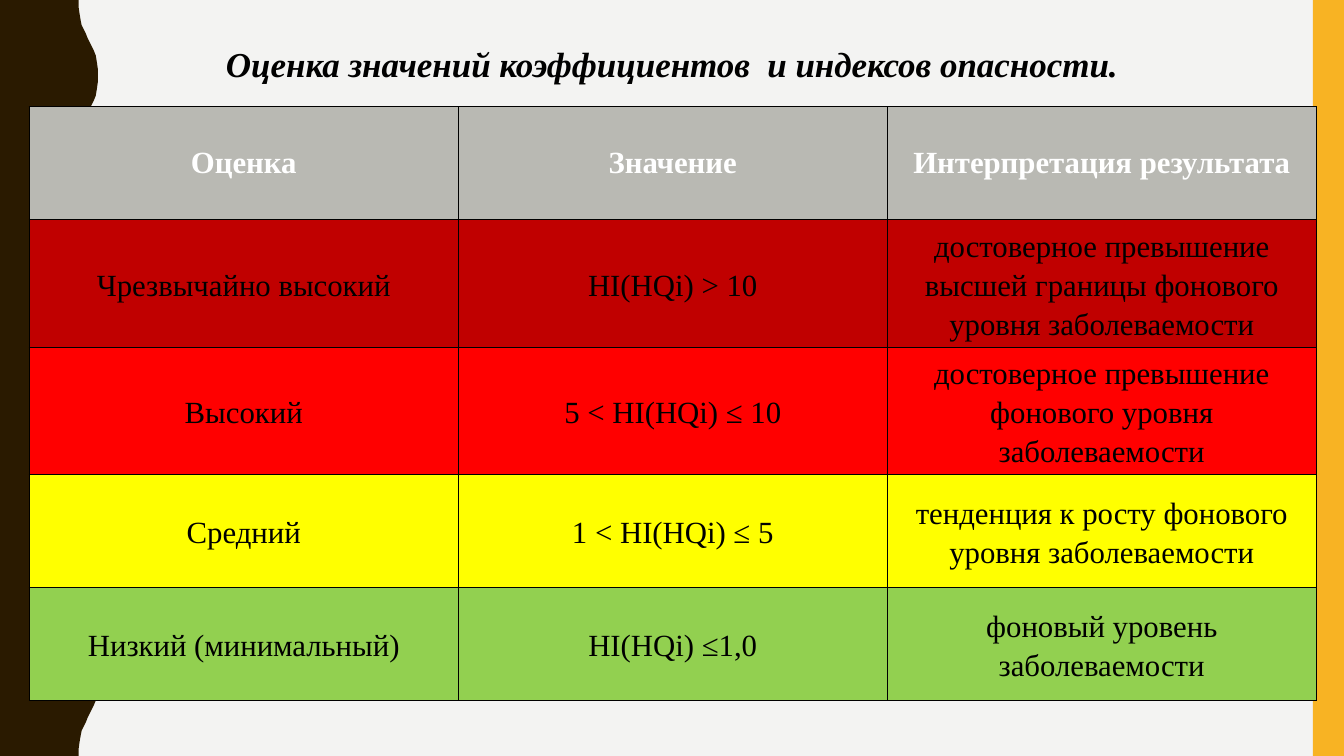
from lxml.etree import SubElement
from pptx import Presentation
from pptx.dml.color import RGBColor
from pptx.enum.shapes import MSO_SHAPE as Shape
from pptx.enum.text import MSO_ANCHOR as Anchor, PP_ALIGN as Align
from pptx.oxml.ns import qn
from pptx.util import Inches, Pt

COLORS = {
    "background": "F3F3F2", "wave": "2A1A00", "stripe": "F8B323",
    "black": "000000", "white": "FFFFFF", "header": "B9B9B3",
    "extreme": "C00000", "high": "FF0000", "medium": "FFFF00", "low": "92D050",
}
FONT = "Times New Roman"


def paint(fill, name):
    fill.solid()
    fill.fore_color.rgb = RGBColor.from_string(COLORS[name])


def style_text(para, size, color, bold, italic=None):
    para.alignment = Align.CENTER
    for span in para.runs:
        span.font.name = FONT
        span.font.size = Pt(size)
        span.font.bold = bold
        span.font.italic = italic
        span.font.color.rgb = RGBColor.from_string(COLORS[color])


deck = Presentation()
deck.slide_width, deck.slide_height = Inches(13.33), Inches(7.5)
page = deck.slides.add_slide(deck.slide_layouts[6])
paint(page.background.fill, "background")

half_wave = [
    (0.78, 0), (0.78, 0.07), (0.79, 0.14), (0.8, 0.2), (0.81, 0.25),
    (0.83, 0.29), (0.85, 0.33), (0.87, 0.38), (0.89, 0.42), (0.91, 0.46),
    (0.93, 0.5), (0.95, 0.55), (0.96, 0.61), (0.97, 0.68), (0.97, 0.75),
]
period = 1.5
full_wave = half_wave + [(x, period - y) for x, y in reversed(half_wave[:-1])]
edge = [(Inches(x), Inches(y + period * turn)) for turn in range(5) for x, y in full_wave]
builder = page.shapes.build_freeform(0, 0)
builder.add_line_segments(edge + [(0, Inches(7.5))], close=True)
wave = builder.convert_to_shape()
stripe = page.shapes.add_shape(Shape.RECTANGLE, Inches(13.02), 0, Inches(0.31), Inches(7.5))
for shape, name in ((wave, "wave"), (stripe, "stripe")):
    shape.shadow.inherit = False
    paint(shape.fill, name)
    shape.line.fill.background()

title = page.shapes.add_textbox(0, Inches(0.37), Inches(13.33), Inches(0.52))
title.text_frame.word_wrap = True
title.text_frame.vertical_anchor = Anchor.MIDDLE
title.text_frame.text = "Оценка значений коэффициентов  и индексов опасности."
style_text(title.text_frame.paragraphs[0], 25, "black", True, True)

rows = [
    ("header", "Оценка", "Значение", "Интерпретация результата"),
    ("extreme", "Чрезвычайно высокий", "HI(HQi) > 10",
     "достоверное превышение высшей границы фонового уровня заболеваемости"),
    ("high", "Высокий", "5 < HI(HQi) ≤ 10",
     "достоверное превышение фонового уровня заболеваемости"),
    ("medium", "Средний", "1 < HI(HQi) ≤ 5",
     "тенденция к росту фонового уровня заболеваемости"),
    ("low", "Низкий (минимальный)", "HI(HQi) ≤1,0",
     "фоновый уровень заболеваемости"),
]
table = page.shapes.add_table(
    len(rows), 3, Inches(0.29), Inches(1.06), Inches(12.76), Inches(5.62)).table
for column in table.columns:
    column.width = Inches(4.255)

for row_index, (level, *texts) in enumerate(rows):
    is_header = level == "header"
    table.rows[row_index].height = Inches(1.12)
    for column_index, text in enumerate(texts):
        cell = table.cell(row_index, column_index)
        cell.text_frame.text = text
        cell.vertical_anchor = Anchor.MIDDLE
        para = cell.text_frame.paragraphs[0]
        style_text(para, 22, "white" if is_header else "black", is_header)
        if not is_header:
            cell.margin_left = cell.margin_right = Inches(0.07)
            cell.margin_top = cell.margin_bottom = 0
            para.line_spacing = 1.15
        if level == "extreme":
            para.space_before = Pt(6)
        properties = cell._tc.get_or_add_tcPr()
        for side in ("a:lnL", "a:lnR", "a:lnT", "a:lnB"):
            border = SubElement(properties, qn(side), w=str(Pt(1)))
            border_fill = SubElement(border, qn("a:solidFill"))
            SubElement(border_fill, qn("a:srgbClr"), val=COLORS["black"])
        paint(cell.fill, level)

deck.save("out.pptx")
